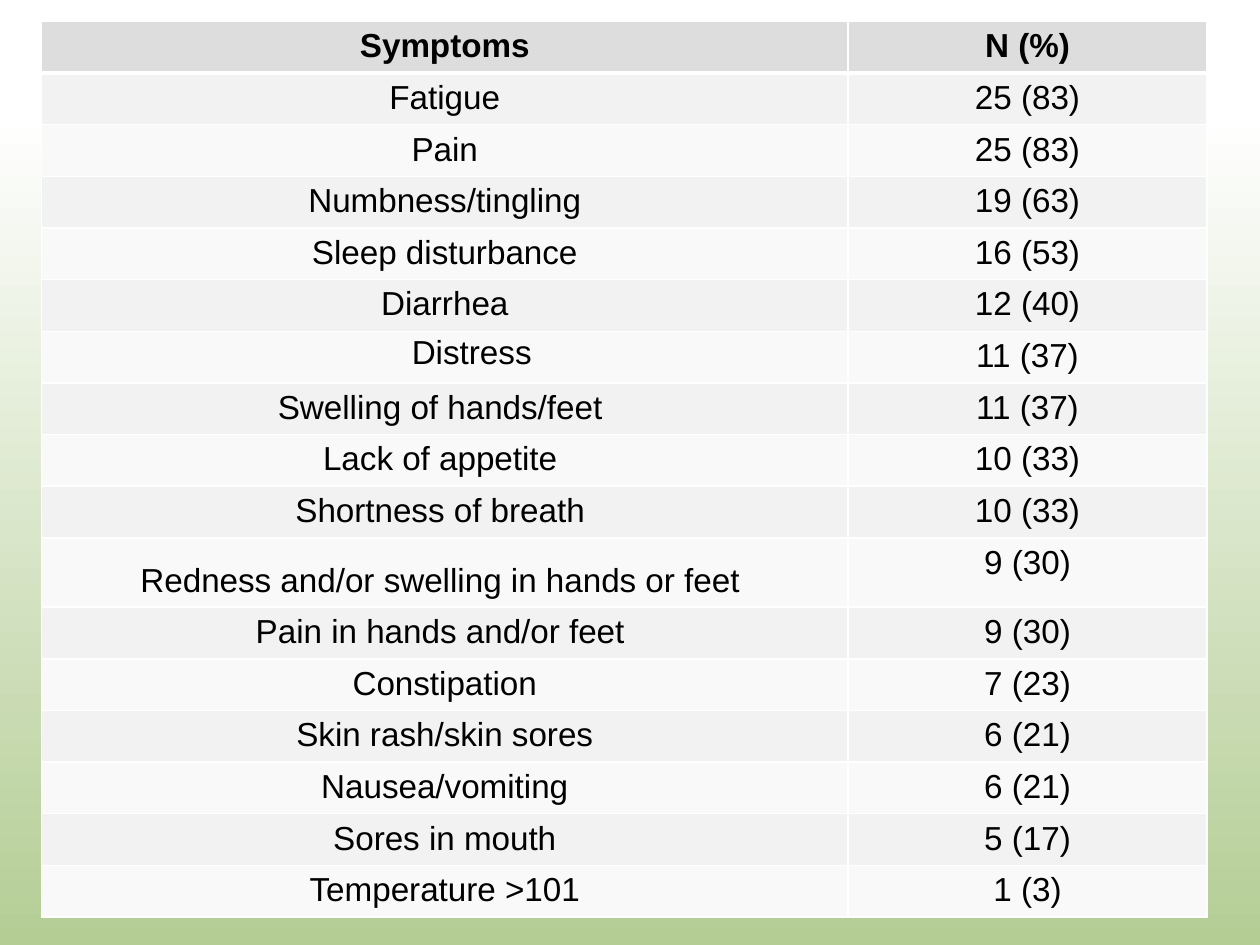
from lxml.etree import SubElement
from pptx import Presentation
from pptx.dml.color import RGBColor
from pptx.enum.text import PP_ALIGN
from pptx.oxml.ns import qn
from pptx.util import Inches, Pt

HEADER = ("Symptoms", "N (%)")
SYMPTOMS = [
    ("Fatigue", "25 (83)"),
    ("Pain", "25 (83)"),
    ("Numbness/tingling", "19 (63)"),
    ("Sleep disturbance", "16 (53)"),
    ("Diarrhea", "12 (40)"),
    ("Distress ", "11 (37)"),
    ("Swelling of hands/feet ", "11 (37)"),
    ("Lack of appetite ", "10 (33)"),
    ("Shortness of breath ", "10 (33)"),
    ("Redness and/or swelling in hands or feet ", "9 (30)"),
    ("Pain in hands and/or feet ", "9 (30)"),
    ("Constipation", "7 (23)"),
    ("Skin rash/skin sores", "6 (21)"),
    ("Nausea/vomiting", "6 (21)"),
    ("Sores in mouth", "5 (17)"),
    ("Temperature >101", "1 (3)"),
]
SPECIAL_FORMAT = {
    "Distress ": {"line_spacing": 0.9, "indent": 0.5},
    "Redness and/or swelling in hands or feet ": {"line_spacing": 1.5},
}
COLORS = {
    "header": "DDDDDD",
    "odd": "F2F2F2",
    "even": "F9F9F9",
    "border": "FFFFFF",
    "text": "000000",
    "top": "FFFFFF",
    "bottom": "B4CD95",
}
LEFT, TOP = 0.33, 0.17
COLUMN_WIDTHS = (6.4, 2.85)
ROW_HEIGHT, TALL_ROW_HEIGHT = 0.41, 0.55


def color(name):
    return RGBColor.from_string(COLORS[name])


def paint_background(page):
    fill = page.background.fill
    fill.gradient()
    fill.gradient_angle = 270
    for stop, name, position in zip(fill.gradient_stops, ("top", "bottom"), (0.12, 1)):
        stop.color.rgb = color(name)
        stop.position = position


def add_borders(cell, bottom=1):
    """Line all four sides; must run before the cell is filled."""
    properties = cell._tc.get_or_add_tcPr()
    for side, width in (("L", 1), ("R", 1), ("T", 1), ("B", bottom)):
        line = SubElement(properties, qn(f"a:ln{side}"), w=str(Pt(width)))
        solid = SubElement(line, qn("a:solidFill"))
        SubElement(solid, qn("a:srgbClr"), val=COLORS["border"])


def write_cell(cell, text, bold=False, line_spacing=None, indent=0):
    para = cell.text_frame.paragraphs[0]
    para.alignment = PP_ALIGN.CENTER
    if line_spacing:
        para.line_spacing = line_spacing
    if indent:
        para._p.get_or_add_pPr().set("marL", str(Inches(indent)))
    span = para.add_run()
    span.text = text
    span.font.name = "Arial"
    span.font.size = Pt(19)
    span.font.bold = bold
    span.font.color.rgb = color("text")


def add_symptom_table(page):
    rows = [HEADER, *SYMPTOMS]
    table = page.shapes.add_table(
        len(rows), len(HEADER), Inches(LEFT), Inches(TOP),
        Inches(sum(COLUMN_WIDTHS)), Inches(ROW_HEIGHT * len(rows)),
    ).table
    table.horz_banding = False
    for column, width in zip(table.columns, COLUMN_WIDTHS):
        column.width = Inches(width)
    for number, texts in enumerate(rows):
        is_header = number == 0
        band = "header" if is_header else ("even", "odd")[number % 2]
        is_tall = SPECIAL_FORMAT.get(texts[0], {}).get("line_spacing", 1) > 1
        table.rows[number].height = Inches(TALL_ROW_HEIGHT if is_tall else ROW_HEIGHT)
        for cell, text in zip(table.rows[number].cells, texts):
            add_borders(cell, bottom=3 if is_header else 1)
            cell.fill.solid()
            cell.fill.fore_color.rgb = color(band)
            write_cell(cell, text, bold=is_header, **SPECIAL_FORMAT.get(text, {}))


def main():
    deck = Presentation()
    deck.slide_width, deck.slide_height = Inches(10), Inches(7.5)
    page = deck.slides.add_slide(deck.slide_layouts[6])
    paint_background(page)
    add_symptom_table(page)
    deck.save("out.pptx")


if __name__ == "__main__":
    main()
